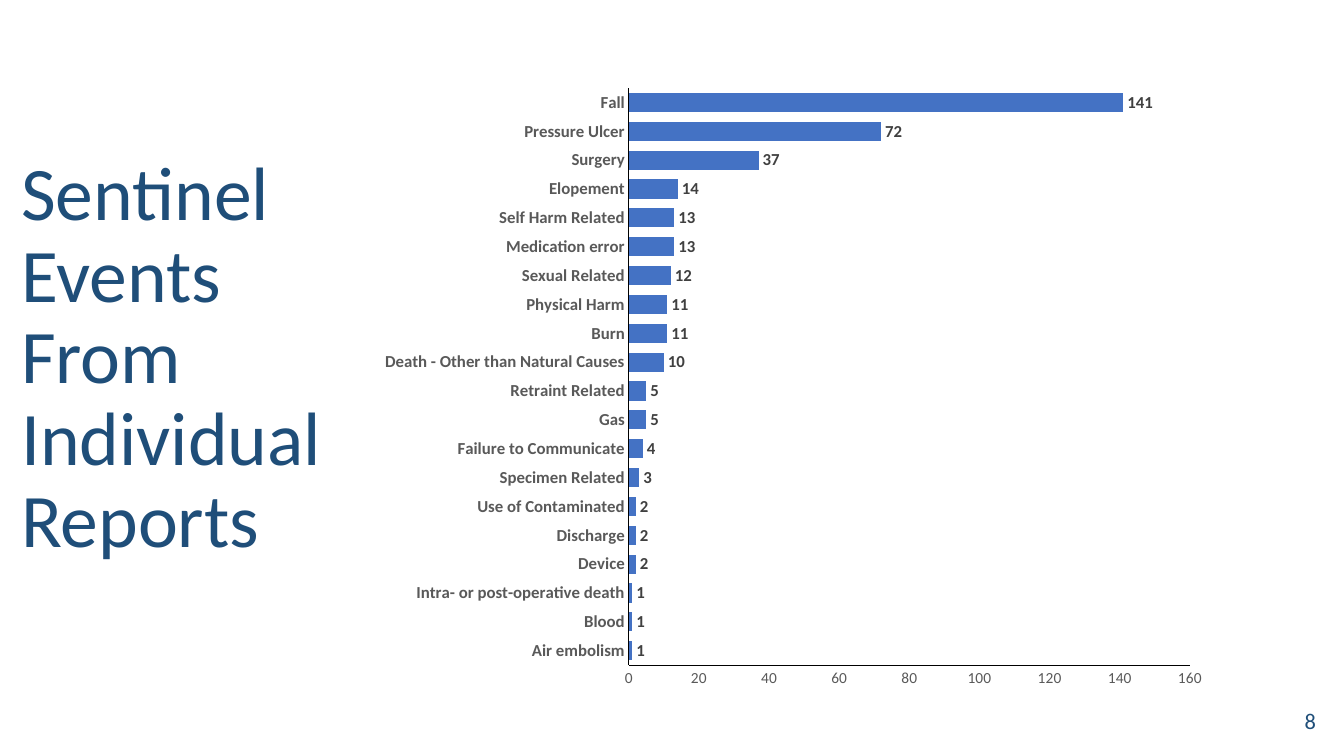
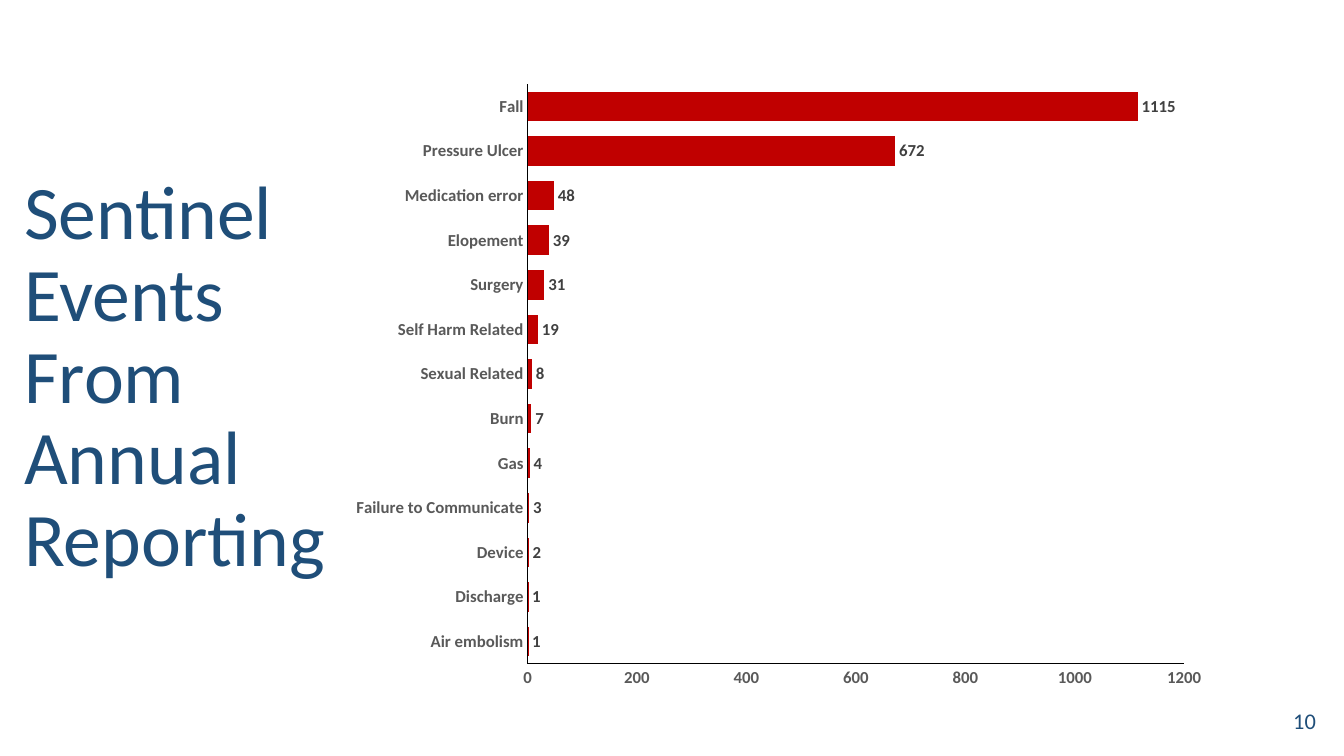
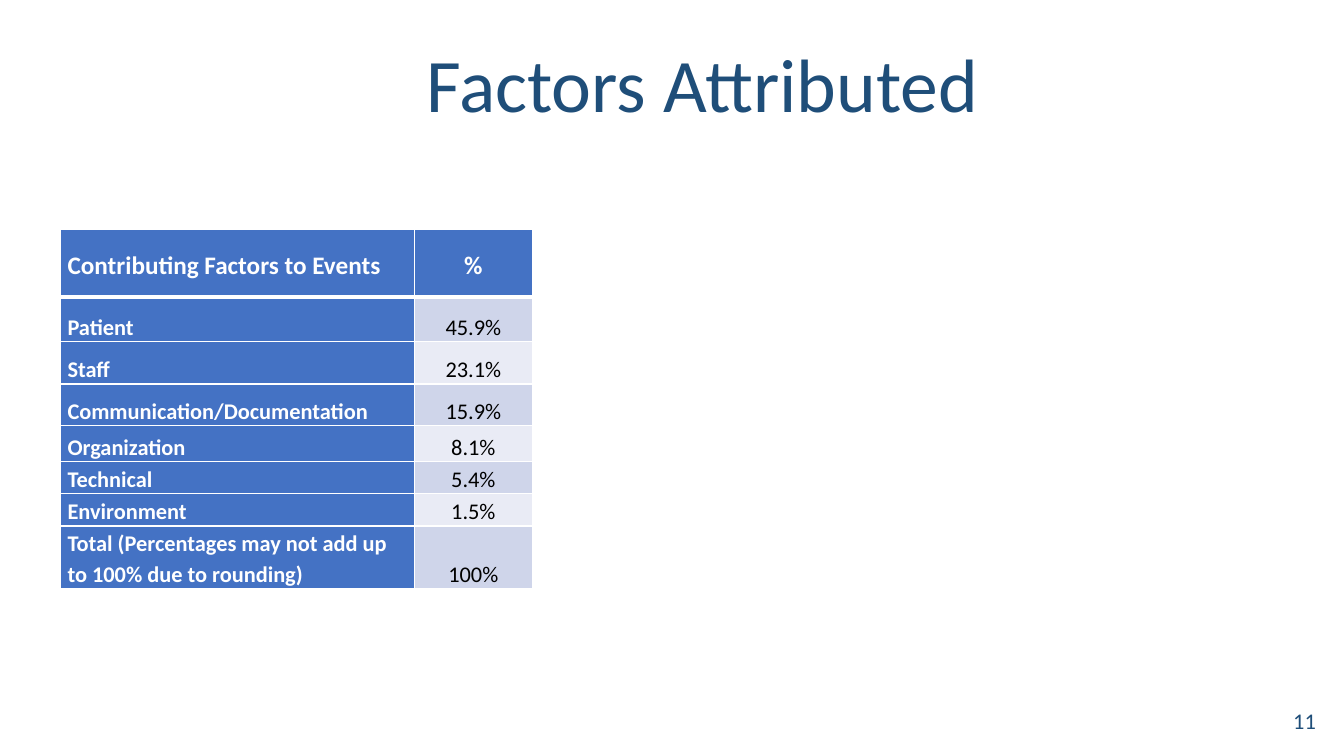
"""Build three slides on sentinel events and their contributing factors."""
from lxml import etree
from pptx import Presentation
from pptx.chart import data
from pptx.dml.color import RGBColor
from pptx.enum import chart as ch, text
from pptx.oxml import ns
from pptx.util import Inches, Pt

FONT = "Calibri"
COLORS = {
    "title": "1F4E79", "blue": "4472C4", "red": "C00000", "white": "FFFFFF",
    "black": "000000", "axis": "595959", "label": "404040",
    "band_dark": "CFD5EA", "band_light": "E9EBF5",
}
INDIVIDUAL = {
    "Air embolism": 1, "Blood": 1, "Intra- or post-operative death": 1,
    "Device": 2, "Discharge": 2, "Use of Contaminated": 2,
    "Specimen Related": 3, "Failure to Communicate": 4, "Gas": 5,
    "Retraint Related": 5, "Death - Other than Natural Causes": 10,
    "Burn": 11, "Physical Harm": 11, "Sexual Related": 12,
    "Medication error": 13, "Self Harm Related": 13, "Elopement": 14,
    "Surgery": 37, "Pressure Ulcer": 72, "Fall": 141,
}
ANNUAL = {
    "Air embolism": 1, "Discharge": 1, "Device": 2,
    "Failure to Communicate": 3, "Gas": 4, "Burn": 7, "Sexual Related": 8,
    "Self Harm Related": 19, "Surgery": 31, "Elopement": 39,
    "Medication error": 48, "Pressure Ulcer": 672, "Fall": 1115,
}
FACTORS = [
    ("Contributing Factors to Events", "%"),
    ("Patient", "45.9%"),
    ("Staff", "23.1%"),
    ("Communication/Documentation", "15.9%"),
    ("Organization", "8.1%"),
    ("Technical", "5.4%"),
    ("Environment", "1.5%"),
    ("Total (Percentages may not add up to 100% due to rounding)", "100%"),
]
COL_WIDTHS = [3.51, 1.17]
ROW_HEIGHTS = [0.67, 0.44, 0.42, 0.41, 0.36, 0.32, 0.32, 0.59]


def rgb(name):
    """Return the named colour."""
    return RGBColor.from_string(COLORS[name])


def set_font(font, size, color, bold=False):
    """Apply the deck font with a size, colour and weight."""
    font.name, font.size, font.bold = FONT, Pt(size), bold
    font.color.rgb = rgb(color)


def add_slide(prs, title, box, number, align=text.PP_ALIGN.LEFT):
    """Add a slide with its title and page number."""
    s = prs.slides.add_slide(prs.slide_layouts[5])
    sp = s.shapes.title
    sp.left, sp.top, sp.width, sp.height = map(Inches, box)
    fill_frame(sp.text_frame, title, 54, align, text.MSO_ANCHOR.BOTTOM)
    sp.text_frame.paragraphs[0].line_spacing = 0.9
    sp = s.shapes.add_textbox(*map(Inches, (10.15, 6.95, 3, 0.4)))
    fill_frame(sp.text_frame, number, 16, text.PP_ALIGN.RIGHT,
               text.MSO_ANCHOR.MIDDLE)
    return s


def fill_frame(tf, content, size, align, anchor):
    """Write one paragraph in the title colour."""
    tf.text = content
    tf.word_wrap = True
    tf.auto_size = text.MSO_AUTO_SIZE.NONE
    tf.vertical_anchor = anchor
    p = tf.paragraphs[0]
    p.alignment = align
    set_font(p.font, size, "title")


def style_axis(axis, size, bold):
    """Give an axis a black line, no ticks and grey labels."""
    axis.has_major_gridlines = False
    axis.major_tick_mark = axis.minor_tick_mark = ch.XL_TICK_MARK.NONE
    axis.format.line.color.rgb = rgb("black")
    axis.format.line.width = Pt(0.75)
    set_font(axis.tick_labels.font, size, "axis", bold)


def add_bars(s, box, counts, color, step, top, size, bold):
    """Add a horizontal bar chart of event counts."""
    cd = data.CategoryChartData()
    cd.categories = list(counts)
    cd.add_series("Series 1", list(counts.values()))
    chart = s.shapes.add_chart(ch.XL_CHART_TYPE.BAR_CLUSTERED,
                               *map(Inches, box), cd).chart
    chart.has_legend = chart.has_title = False
    set_font(chart.font, size, "black", bold)
    style_axis(chart.category_axis, 12, True)
    style_axis(chart.value_axis, size, bold)
    chart.value_axis.minimum_scale = 0
    chart.value_axis.maximum_scale = top
    chart.value_axis.major_unit = step
    plot = chart.plots[0]
    plot.gap_width = 51
    plot.vary_by_categories = False
    fill = plot.series[0].format.fill
    fill.solid()
    fill.fore_color.rgb = rgb(color)
    plot.has_data_labels = True
    labels = plot.data_labels
    labels.show_value = True
    labels.position = ch.XL_LABEL_POSITION.OUTSIDE_END
    set_font(labels.font, 12, "label", True)


def set_borders(cell, widths):
    """Draw white left, right, top and bottom borders of given widths."""
    tcPr = cell._tc.get_or_add_tcPr()
    for side, width in zip("LRTB", widths):
        ln = etree.SubElement(tcPr, ns.qn(f"a:ln{side}"), w=str(Pt(width)))
        fill = etree.SubElement(ln, ns.qn("a:solidFill"))
        etree.SubElement(fill, ns.qn("a:srgbClr"), val=COLORS["white"])


def fill_cell(cell, content, row, col):
    """Write and style one table cell by its place in the grid."""
    header, strong = row == 0, row == 0 or col == 0
    set_borders(cell, (1, 1, 3 if row == 1 else 1, 3 if header else 1))
    cell.fill.solid()
    band = "band_dark" if row % 2 else "band_light"
    cell.fill.fore_color.rgb = rgb("blue" if strong else band)
    cell.margin_left = cell.margin_right = Inches(0.07)
    cell.margin_top = cell.margin_bottom = 0
    cell.vertical_anchor = (text.MSO_ANCHOR.MIDDLE if header
                            else text.MSO_ANCHOR.BOTTOM)
    cell.text = content
    p = cell.text_frame.paragraphs[0]
    p.alignment = text.PP_ALIGN.CENTER if col else text.PP_ALIGN.LEFT
    p.line_spacing = 1.15
    set_font(p.font, 18 if header else 16,
             "white" if strong else "black", strong)


def add_factors(s, left, top):
    """Add the table of contributing factors."""
    size = Inches(sum(COL_WIDTHS)), Inches(sum(ROW_HEIGHTS))
    table = s.shapes.add_table(len(FACTORS), len(COL_WIDTHS),
                               Inches(left), Inches(top), *size).table
    for column, width in zip(table.columns, COL_WIDTHS):
        column.width = Inches(width)
    for i, (height, values) in enumerate(zip(ROW_HEIGHTS, FACTORS)):
        table.rows[i].height = Inches(height)
        for j, value in enumerate(values):
            fill_cell(table.cell(i, j), value, i, j)


def main():
    """Build and save the deck."""
    prs = Presentation()
    prs.slide_width, prs.slide_height = Inches(13.33), Inches(7.5)
    s = add_slide(prs, "Sentinel Events From Individual Reports",
                  (0.11, 1.86, 3.31, 3.78), "8")
    add_bars(s, (3.65, 0.75, 8.44, 6.2), INDIVIDUAL, "blue", 20, 160, 11, False)
    s = add_slide(prs, "Sentinel Events From Annual Reporting",
                  (0.14, 2.14, 3.2, 3.69), "10")
    add_bars(s, (3.36, 0.71, 8.73, 6.24), ANNUAL, "red", 200, 1200, 12, True)
    s = add_slide(prs, "Factors Attributed", (1.52, 0.3, 10.89, 1.03), "11",
                  text.PP_ALIGN.CENTER)
    add_factors(s, 0.6, 2.28)
    prs.save("out.pptx")


if __name__ == "__main__":
    main()
